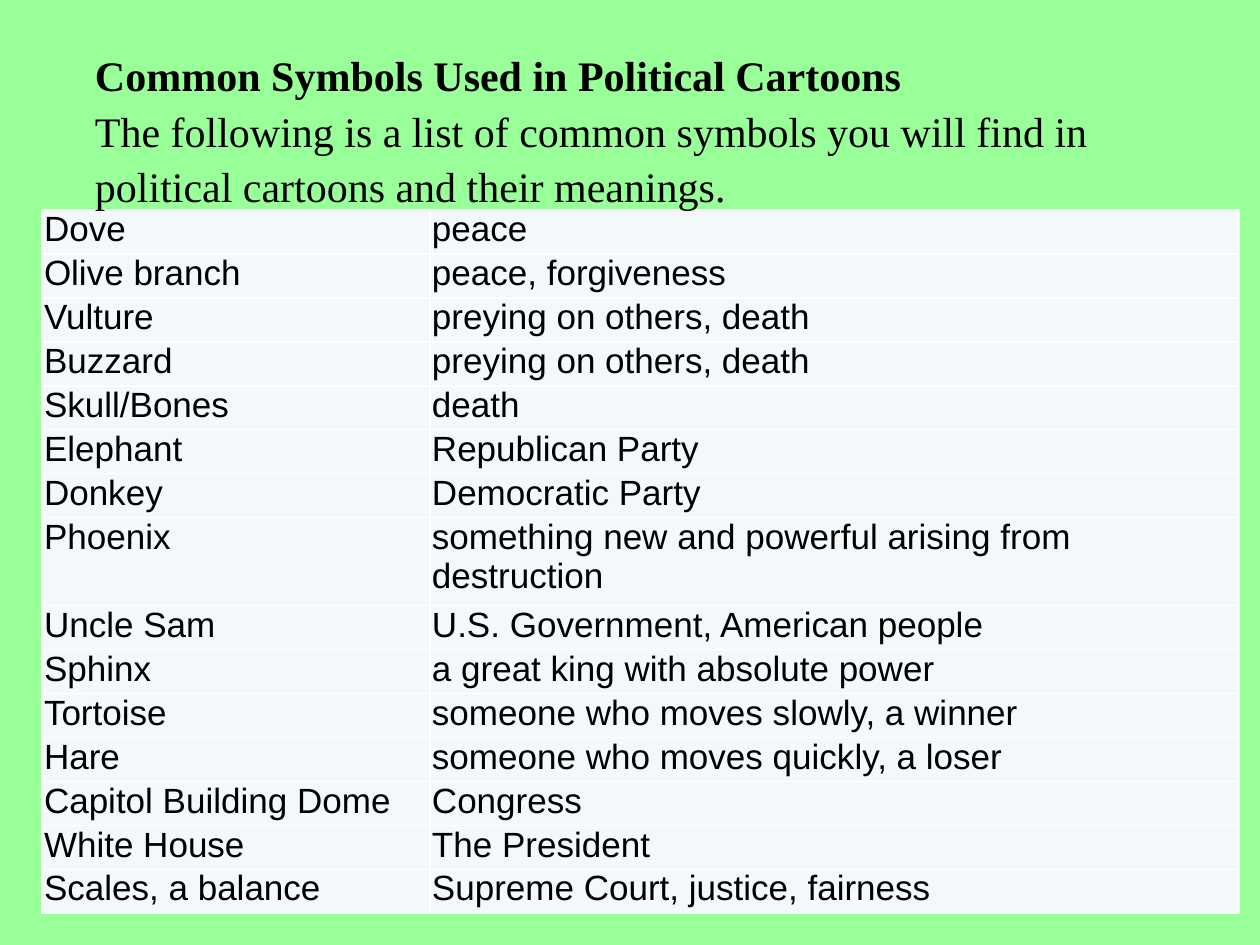
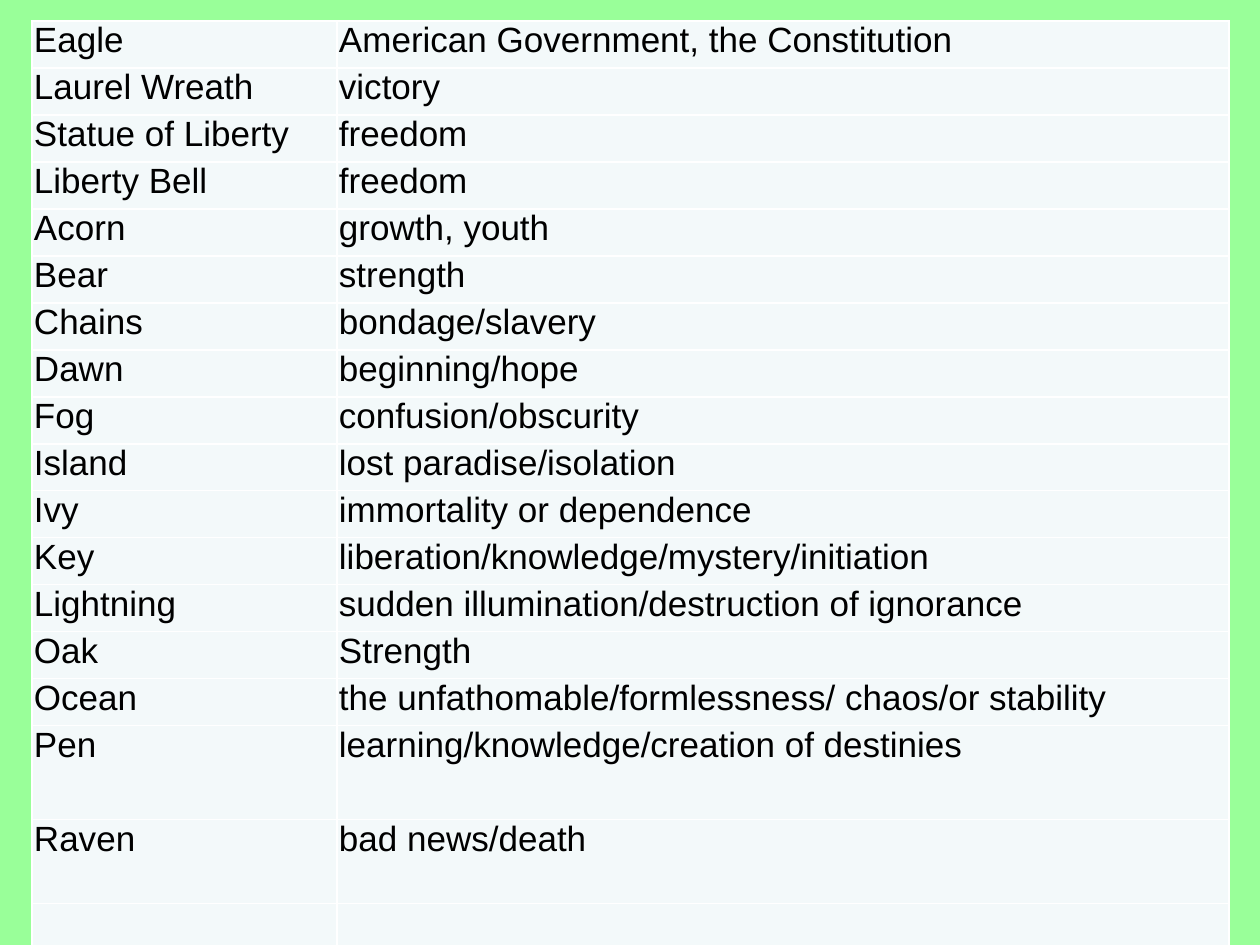
from lxml.etree import SubElement
from pptx import Presentation
from pptx.dml.color import RGBColor
from pptx.enum.text import MSO_ANCHOR
from pptx.oxml.ns import qn
from pptx.util import Emu, Pt

PX_PER_INCH = 126
GREEN = RGBColor(0x99, 0xFF, 0x99)
PALE = RGBColor(0xF3, 0xF9, 0xFA)
WHITE = RGBColor(0xFF, 0xFF, 0xFF)
BLACK = RGBColor(0, 0, 0)

HEADING = "Common Symbols Used in Political Cartoons"
INTRO = ("The following is a list of common symbols you will find in "
         "political cartoons and their meanings.")

FIRST_SYMBOLS = [
    ("Dove", "peace"),
    ("Olive branch", "peace, forgiveness"),
    ("Vulture", "preying on others, death"),
    ("Buzzard", "preying on others, death"),
    ("Skull/Bones", "death"),
    ("Elephant", "Republican Party"),
    ("Donkey", "Democratic Party"),
    ("Phoenix", "something new and powerful arising from destruction"),
    ("Uncle Sam", "U.S. Government, American people"),
    ("Sphinx", "a great king with absolute power"),
    ("Tortoise", "someone who moves slowly, a winner"),
    ("Hare", "someone who moves quickly, a loser"),
    ("Capitol Building Dome", "Congress"),
    ("White House", "The President"),
    ("Scales, a balance", "Supreme Court, justice, fairness"),
]

MORE_SYMBOLS = [
    ("Eagle", "American Government, the Constitution"),
    ("Laurel Wreath", "victory"),
    ("Statue of Liberty", "freedom"),
    ("Liberty Bell", "freedom"),
    ("Acorn", "growth, youth"),
    ("Bear", "strength"),
    ("Chains", "bondage/slavery"),
    ("Dawn", "beginning/hope"),
    ("Fog", "confusion/obscurity"),
    ("Island", "lost paradise/isolation"),
    ("Ivy", "immortality or dependence"),
    ("Key", "liberation/knowledge/mystery/initiation"),
    ("Lightning", "sudden illumination/destruction of ignorance"),
    ("Oak", "Strength"),
    ("Ocean", "the unfathomable/formlessness/ chaos/or stability"),
    ("Pen", "learning/knowledge/creation of destinies"),
    ("Raven", "bad news/death"),
    ("", ""),
]


def px(length):
    return Emu(round(length * 914400 / PX_PER_INCH))


def add_run(paragraph, text, font_name, size, bold=False):
    run = paragraph.add_run()
    run.text = text
    run.font.name = font_name
    run.font.size = Pt(size)
    run.font.bold = bold
    run.font.color.rgb = BLACK


def add_green_slide(deck):
    slide = deck.slides.add_slide(deck.slide_layouts[6])
    slide.background.fill.solid()
    slide.background.fill.fore_color.rgb = GREEN
    return slide


def add_borders(cell):
    properties = cell._tc.get_or_add_tcPr()
    for side in ("a:lnL", "a:lnR", "a:lnT", "a:lnB"):
        edge = SubElement(properties, qn(side), w=str(Pt(1)))
        paint = SubElement(edge, qn("a:solidFill"))
        SubElement(paint, qn("a:srgbClr"), val=str(WHITE))


def fill_cell(cell, text):
    add_borders(cell)
    cell.fill.solid()
    cell.fill.fore_color.rgb = PALE
    cell.margin_left = cell.margin_right = px(2)
    cell.margin_top = cell.margin_bottom = 0
    if text:
        add_run(cell.text_frame.paragraphs[0], text, "Arial", 20)


def add_symbol_table(slide, box, symbols, symbol_width, row_height, tall_rows):
    left, top, width = box
    heights = [tall_rows.get(symbol, row_height) for symbol, _ in symbols]
    table = slide.shapes.add_table(len(symbols), 2, px(left), px(top),
                                   px(width), px(sum(heights))).table
    table.first_row = table.horz_banding = False
    table.columns[0].width = px(symbol_width)
    table.columns[1].width = px(width - symbol_width)
    for row, height, entry in zip(table.rows, heights, symbols):
        row.height = px(height)
        for cell, text in zip(row.cells, entry):
            fill_cell(cell, text)


def add_introduction(slide, box):
    frame = slide.shapes.add_textbox(*map(px, box)).text_frame
    frame.word_wrap = True
    frame.vertical_anchor = MSO_ANCHOR.TOP
    frame.margin_left = frame.margin_right = 0
    frame.margin_top = frame.margin_bottom = 0
    heading = frame.paragraphs[0]
    intro = frame.add_paragraph()
    for paragraph, text in ((heading, HEADING), (intro, INTRO)):
        paragraph.line_spacing = 1.1
        add_run(paragraph, text, "Times New Roman", 24, paragraph is heading)


def main():
    deck = Presentation()
    deck.slide_width, deck.slide_height = px(1260), px(945)

    opening = add_green_slide(deck)
    add_symbol_table(opening, (42, 210, 1197), FIRST_SYMBOLS, 388, 44,
                     {"Phoenix": 88})
    add_introduction(opening, (95, 45, 1124, 203))

    continuation = add_green_slide(deck)
    add_symbol_table(continuation, (32, 21, 1197), MORE_SYMBOLS, 305, 47,
                     {"Pen": 94, "Raven": 84})

    deck.save("out.pptx")


if __name__ == "__main__":
    main()
